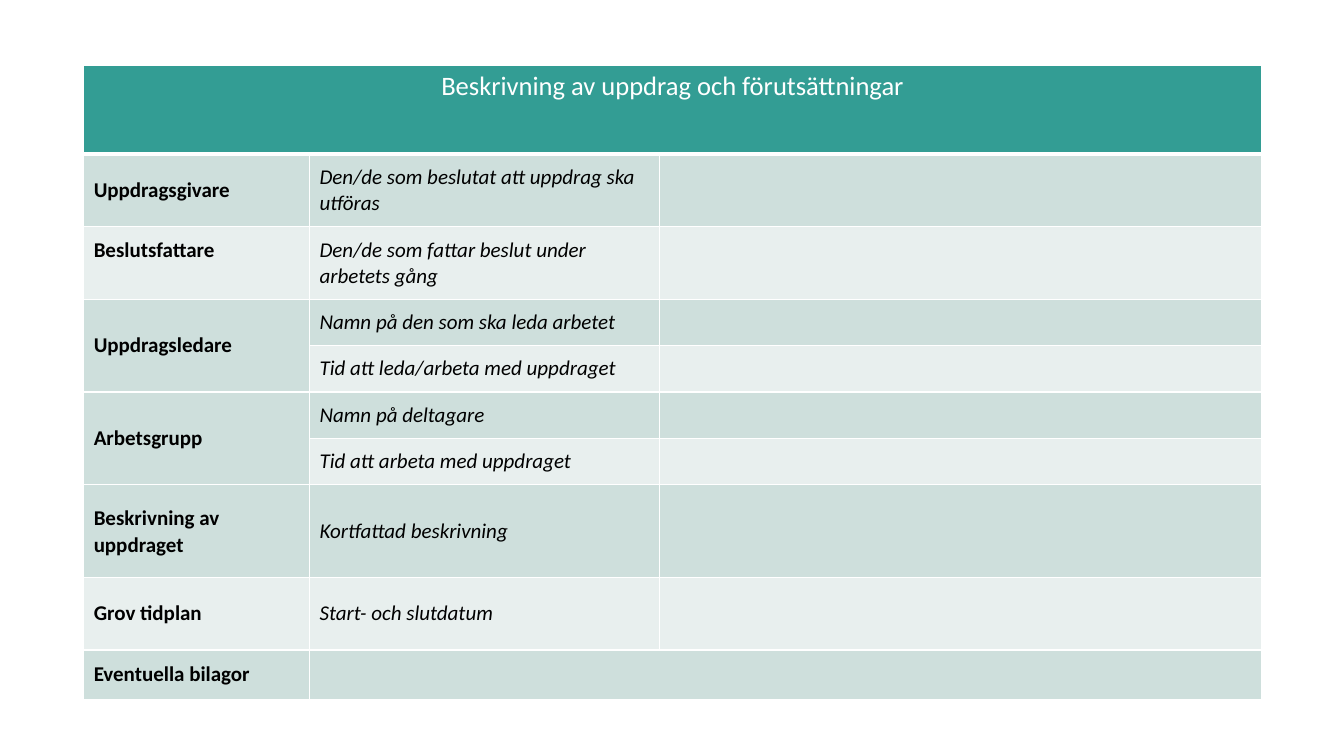
from lxml.etree import SubElement
from pptx import Presentation
from pptx.dml.color import RGBColor
from pptx.enum.text import MSO_ANCHOR as Anchor, PP_ALIGN as Align
from pptx.oxml.ns import qn
from pptx.util import Inches, Pt

SLIDE_W, SLIDE_H = 13.33, 7.5
TEAL, BAND_DARK, BAND_LIGHT = "339D94", "CEDFDC", "E8EFEE"
WHITE, BLACK = "FFFFFF", "000000"

# Relative sizes of the grid's columns and rows
COLUMNS = [2.24, 3.47, 5.97]
ROWS = [0.88, 0.72, 0.72, 0.46, 0.46, 0.46, 0.46, 0.92, 0.72, 0.49]

HEADING = "Beskrivning av uppdrag och förutsättningar"
# Each topic with the instructions that stand beside it, one per row
TOPICS = [
    ("Uppdragsgivare", ["Den/de som beslutat att uppdrag ska utföras"]),
    ("Beslutsfattare", ["Den/de som fattar beslut under arbetets gång"]),
    ("Uppdragsledare", ["Namn på den som ska leda arbetet",
                        "Tid att leda/arbeta med uppdraget"]),
    ("Arbetsgrupp", ["Namn på deltagare", "Tid att arbeta med uppdraget"]),
    ("Beskrivning av uppdraget", ["Kortfattad beskrivning"]),
    ("Grov tidplan", ["Start- och slutdatum"]),
    ("Eventuella bilagor", [""]),
]
HEADING_FONT = {"name": "Calibri", "size": Pt(19), "bold": False}
TOPIC_FONT = {"name": "Calibri", "size": Pt(15), "bold": True}
HINT_FONT = {"name": "Calibri", "size": Pt(15), "bold": False, "italic": True}


def color(hex_value):
    return RGBColor.from_string(hex_value)


def set_all(target, values):
    for name, value in values.items():
        setattr(target, name, value)


def style_cell(cell, fill, bottom_width=1):
    """White rules on every side, then the fill."""
    properties = cell._tc.get_or_add_tcPr()
    for side, width in (("L", 1), ("R", 1), ("T", 1), ("B", bottom_width)):
        rule = SubElement(properties, qn(f"a:ln{side}"), w=str(Pt(width)))
        SubElement(SubElement(rule, qn("a:solidFill")), qn("a:srgbClr"), val=WHITE)
    cell.fill.solid()
    cell.fill.fore_color.rgb = color(fill)
    set_all(cell, {"margin_left": Inches(0.1), "margin_right": Inches(0.1),
                   "margin_top": Inches(0.05), "margin_bottom": Inches(0.05),
                   "vertical_anchor": Anchor.MIDDLE})


def write(cell, text, font, ink=BLACK):
    paragraph = cell.text_frame.paragraphs[0]
    run = paragraph.add_run()
    run.text = text
    set_all(run.font, font)
    run.font.color.rgb = color(ink)
    return paragraph


def add_assignment_table(slide, left, top, width, height):
    table = slide.shapes.add_table(
        len(ROWS), len(COLUMNS), Inches(left), Inches(top),
        Inches(width), Inches(height)).table
    for column, share in zip(table.columns, COLUMNS):
        column.width = Inches(width * share / sum(COLUMNS))
    for row, share in zip(table.rows, ROWS):
        row.height = Inches(height * share / sum(ROWS))

    # Banded rows below the heading
    for index, row in enumerate(table.rows):
        fill = TEAL if index == 0 else BAND_DARK if index % 2 else BAND_LIGHT
        for cell in row.cells:
            style_cell(cell, fill, bottom_width=1 if index else 3)

    # Heading across all columns
    heading = table.cell(0, 0)
    heading.merge(table.cell(0, len(COLUMNS) - 1))
    heading.vertical_anchor = Anchor.TOP
    write(heading, HEADING, HEADING_FONT, WHITE).alignment = Align.CENTER

    # Topics and their instructions
    row = 1
    for topic, hints in TOPICS:
        topic_cell = table.cell(row, 0)
        if len(hints) > 1:
            topic_cell.merge(table.cell(row + len(hints) - 1, 0))
        label = write(topic_cell, topic, TOPIC_FONT)
        if topic == "Beslutsfattare":  # level with the first line beside it
            topic_cell.margin_bottom = Inches(0.3)
        elif topic == "Beskrivning av uppdraget":
            set_all(topic_cell, {"margin_top": 0, "margin_bottom": 0})
            set_all(label, {"line_spacing": 1.07, "space_after": Pt(8)})
        for offset, hint in enumerate(hints):
            hint_cell = table.cell(row + offset, 1)
            if hint:
                write(hint_cell, hint, HINT_FONT)
            else:
                hint_cell.merge(table.cell(row + offset, 2))
        row += len(hints)


def main():
    deck = Presentation()
    deck.slide_width, deck.slide_height = Inches(SLIDE_W), Inches(SLIDE_H)
    slide = deck.slides.add_slide(deck.slide_layouts[6])
    add_assignment_table(slide, 0.83, 0.65, sum(COLUMNS), sum(ROWS))
    deck.save("out.pptx")


if __name__ == "__main__":
    main()
